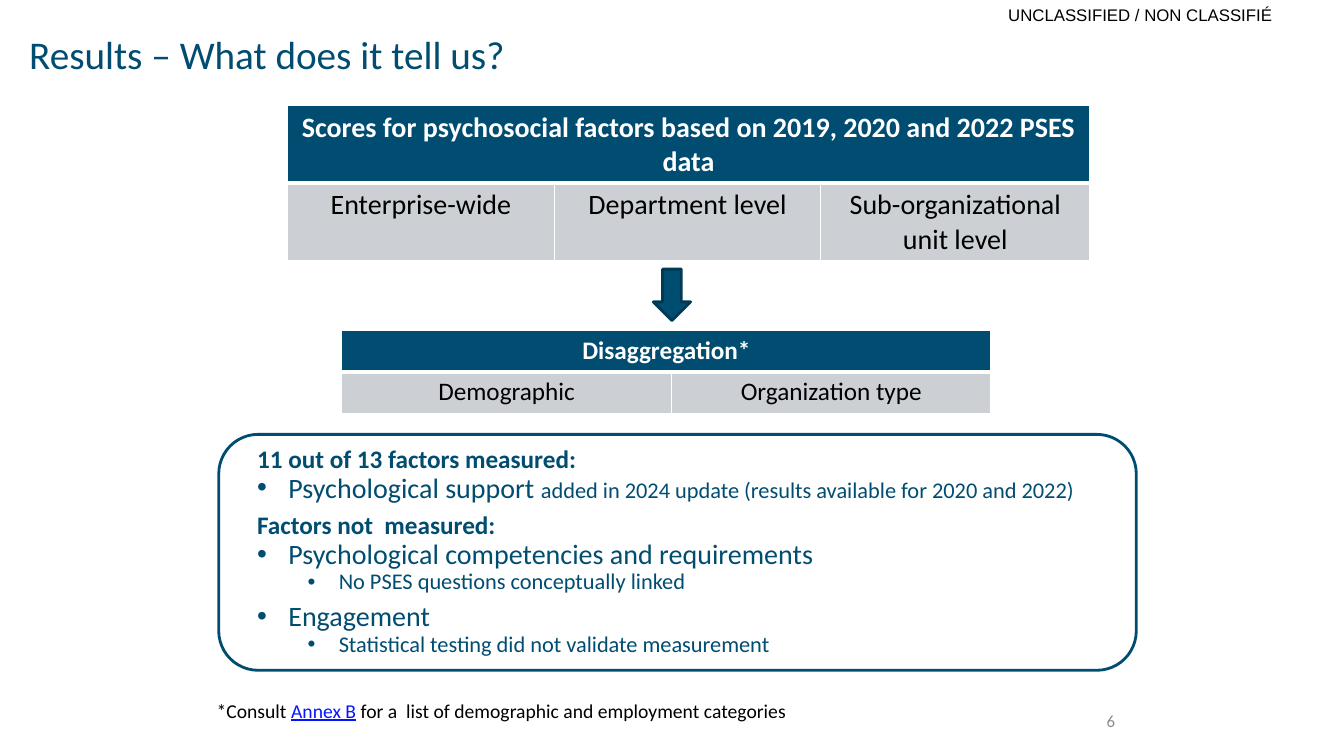
from dataclasses import dataclass

from lxml.etree import SubElement
from pptx import Presentation
from pptx.dml.color import RGBColor
from pptx.enum.shapes import MSO_SHAPE
from pptx.enum.text import MSO_ANCHOR, PP_ALIGN
from pptx.oxml.ns import qn
from pptx.slide import Slide
from pptx.text.text import TextFrame
from pptx.util import Inches, Pt

TEAL, DARK_TEAL, GREY, WHITE, BLACK = "004D71", "003954", "CCD0D5", "FFFFFF", "000000"
LINK_BLUE, NUMBER_GREY = "0415FF", "8C8C8C"


@dataclass
class Span:
    text: str
    size: float
    color: str = TEAL
    bold: bool = False
    underline: bool = False
    font: str = "Calibri"


@dataclass
class Line:
    spans: list[Span]
    level: int = 0
    bulleted: bool = False
    after: float = 0
    spacing: float = 1.0
    align: PP_ALIGN = PP_ALIGN.LEFT


@dataclass
class ScoreTable:
    left: float
    top: float
    columns: list[float]
    row_height: float
    size: float
    header: str
    labels: list[str]


def rgb(color: str) -> RGBColor:
    return RGBColor.from_string(color)


def style(font, span: Span) -> None:
    font.name, font.size, font.bold = span.font, Pt(span.size), span.bold
    font.color.rgb = rgb(span.color)
    if span.underline:
        font.underline = True


def write(frame: TextFrame, lines: list[Line]) -> None:
    for index, line in enumerate(lines):
        paragraph = frame.add_paragraph() if index else frame.paragraphs[0]
        if line.bulleted:
            properties = paragraph._p.get_or_add_pPr()
            properties.set("marL", str(Inches(0.31 + 0.5 * line.level)))
            properties.set("indent", str(Inches(-0.31)))
            SubElement(properties, qn("a:buFont"), typeface="Arial")
            SubElement(properties, qn("a:buChar"), char="•")
        paragraph.level = line.level
        paragraph.alignment = line.align
        paragraph.line_spacing = line.spacing
        paragraph.space_after = Pt(line.after)
        for span in line.spans:
            run = paragraph.add_run()
            run.text = span.text
            if len(line.spans) > 1:
                style(run.font, span)
        if len(line.spans) == 1:
            style(paragraph.font, line.spans[0])


def add_text(slide: Slide, box: tuple[float, ...], lines: list[Line],
             margins: tuple[float, ...] = (0.1, 0.05, 0.1, 0.05),
             anchor: MSO_ANCHOR = MSO_ANCHOR.TOP) -> None:
    frame = slide.shapes.add_textbox(*map(Inches, box)).text_frame
    frame.word_wrap = True
    frame.vertical_anchor = anchor
    frame.margin_left, frame.margin_top, frame.margin_right, frame.margin_bottom = map(Inches, margins)
    write(frame, lines)


def add_outlined(slide: Slide, kind: MSO_SHAPE, box: tuple[float, ...],
                 line: str, fill: str | None = None) -> None:
    shape = slide.shapes.add_shape(kind, *map(Inches, box))
    shape.shadow.inherit = False
    if fill:
        shape.fill.solid()
        shape.fill.fore_color.rgb = rgb(fill)
    else:
        shape.fill.background()
    shape.line.color.rgb = rgb(line)
    shape.line.width = Pt(2)


def fill_cell(cell, text: str, size: float, header: bool) -> None:
    cell.fill.solid()
    cell.fill.fore_color.rgb = rgb(TEAL if header else GREY)
    span = Span(text, size, WHITE if header else BLACK, header)
    write(cell.text_frame, [Line([span], align=PP_ALIGN.CENTER)])


def add_borders(cell, header: bool) -> None:
    properties = cell._tc.get_or_add_tcPr()
    for index, side in enumerate(("lnL", "lnR", "lnT", "lnB")):
        thick = side == ("lnB" if header else "lnT")
        border = SubElement(properties, qn(f"a:{side}"), w=str(Pt(3 if thick else 1)))
        SubElement(SubElement(border, qn("a:solidFill")), qn("a:srgbClr"), val=WHITE)
        properties.remove(border)
        properties.insert(index, border)


def add_score_table(slide: Slide, data: ScoreTable) -> None:
    table = slide.shapes.add_table(
        2, len(data.columns), Inches(data.left), Inches(data.top),
        Inches(sum(data.columns)), Inches(2 * data.row_height)).table
    for column, width in zip(table.columns, data.columns):
        column.width = Inches(width)
    table.cell(0, 0).merge(table.cell(0, len(data.columns) - 1))
    fill_cell(table.cell(0, 0), data.header, data.size, True)
    for index, label in enumerate(data.labels):
        fill_cell(table.cell(1, index), label, data.size, False)
        for row in (0, 1):
            add_borders(table.cell(row, index), row == 0)


def heading(text: str) -> Line:
    return Line([Span(text, 18, bold=True)], spacing=0.9)


def factor(text: str, detail: str = "", after: float = 0) -> Line:
    spans = [Span(text, 20)] + ([Span(detail, 16)] if detail else [])
    return Line(spans, bulleted=True, after=after, spacing=0.9)


def reason(text: str) -> Line:
    return Line([Span(text, 16)], level=1, bulleted=True, after=5.6, spacing=0.9)


SCORES = ScoreTable(2.85, 1.05, [2.65, 2.64, 2.67], 0.76, 20,
                    "Scores for psychosocial factors based on 2019, 2020 and 2022 PSES data",
                    ["Enterprise-wide", "Department level", "Sub-organizational unit level"])
DISAGGREGATION = ScoreTable(3.39, 3.28, [3.27, 3.17], 0.41, 18, "Disaggregation*",
                            ["Demographic", "Organization type"])
FINDINGS = [
    heading("11 out of 13 factors measured:"),
    factor("Psychological support ",
           "added in 2024 update (results available for 2020 and 2022)", after=6.5),
    heading("Factors not  measured:"),
    factor("Psychological competencies and requirements"),
    reason("No PSES questions conceptually linked"),
    factor("Engagement"),
    reason("Statistical testing did not validate measurement"),
]
FOOTNOTE = Line([
    Span("*Consult ", 14, BLACK),
    Span("Annex B", 14, LINK_BLUE, underline=True),
    Span(" for a  list of demographic and employment categories", 14, BLACK),
])


def main() -> None:
    presentation = Presentation()
    presentation.slide_width, presentation.slide_height = Inches(13.33), Inches(7.5)
    slide = presentation.slides.add_slide(presentation.slide_layouts[6])

    # Classification, page number and title
    add_text(slide, (9.3, 0.05, 4.03, 0.2),
             [Line([Span("UNCLASSIFIED / NON CLASSIFIÉ", 12, BLACK, font="Arial")],
                   align=PP_ALIGN.RIGHT)], (0, 0, 0.71, 0), MSO_ANCHOR.MIDDLE)
    add_text(slide, (8.83, 6.95, 2.33, 0.4),
             [Line([Span("6", 12, NUMBER_GREY)], align=PP_ALIGN.RIGHT)],
             anchor=MSO_ANCHOR.MIDDLE)
    add_text(slide, (0.29, 0.3, 5.74, 1.16),
             [Line([Span("Results – What does it tell us?", 28)])], (0, 0, 0, 0))

    # Footnote
    add_text(slide, (2.05, 6.88, 8.16, 0.34), [FOOTNOTE])

    # Findings panel
    add_outlined(slide, MSO_SHAPE.ROUNDED_RECTANGLE, (2.17, 4.31, 9.1, 2.34), TEAL)
    add_text(slide, (2.48, 4.41, 9.01, 2.13), FINDINGS, (0.07,) * 4, MSO_ANCHOR.MIDDLE)

    # Scores leading to their disaggregation
    for table in (SCORES, DISAGGREGATION):
        add_score_table(slide, table)
    add_outlined(slide, MSO_SHAPE.DOWN_ARROW, (6.48, 2.67, 0.37, 0.51), DARK_TEAL, TEAL)

    presentation.save("out.pptx")


if __name__ == "__main__":
    main()
